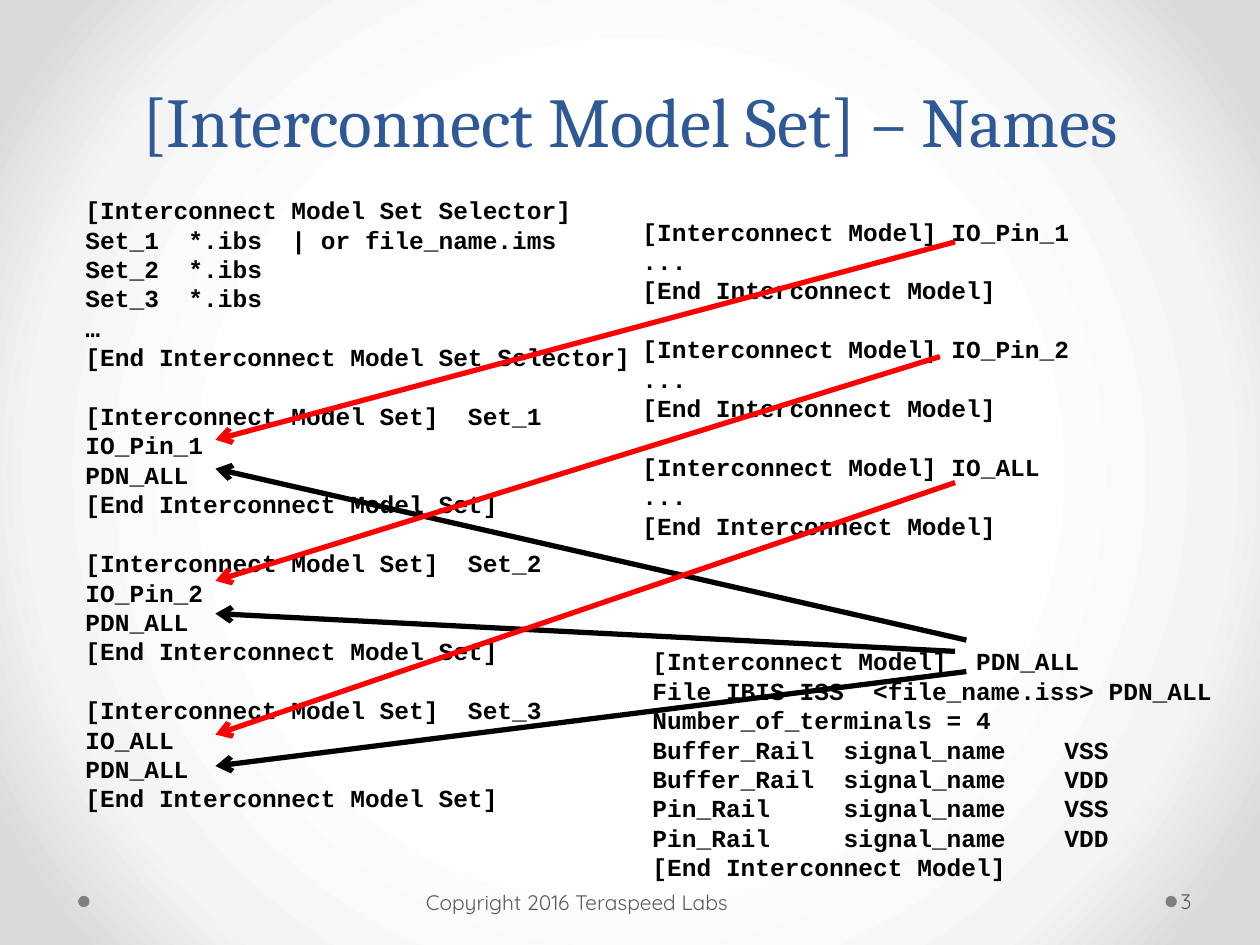
from pptx import Presentation
from pptx.dml.color import RGBColor
from pptx.enum.shapes import MSO_CONNECTOR, MSO_SHAPE
from pptx.enum.text import MSO_ANCHOR, PP_ALIGN
from pptx.oxml import parse_xml
from pptx.oxml.ns import nsdecls
from pptx.util import Inches, Pt

CODE_FONT = "Courier New"
FOOTER_FONT = "Quicksand"
BLACK, RED, BLUE = "000000", "FF0000", "2F5897"
GREY, DOT_GREY = "595959", "808080"
GLOW_STOPS = [(50, "FFFFFF"), (76, "F4F4F4"), (92, "DADADA")]

ARROW_TIP_X = 1.71
# Start x, start y, tip y, colour
ARROWS = [
    (7.58, 5.17, 4.87, BLACK),
    (7.67, 5.08, 3.72, BLACK),
    (7.67, 5.33, 6.08, BLACK),
    (7.58, 1.92, 3.49, RED),
    (7.46, 2.83, 4.61, RED),
    (7.58, 3.83, 5.83, RED),
]

SELECTOR = [
    "[Interconnect Model Set Selector]",
    "Set_1  *.ibs  | or file_name.ims",
    "Set_2  *.ibs",
    "Set_3  *.ibs",
    "…",
    "[End Interconnect Model Set Selector]",
]
IO_MODELS = ["IO_Pin_1", "IO_Pin_2", "IO_ALL"]
PDN_MODEL = [
    "[Interconnect Model]  PDN_ALL",
    "File_IBIS-ISS  <file_name.iss> PDN_ALL",
    "Number_of_terminals = 4",
    "Buffer_Rail  signal_name    VSS",
    "Buffer_Rail  signal_name    VDD",
    "Pin_Rail     signal_name    VSS",
    "Pin_Rail     signal_name    VDD",
    "[End Interconnect Model]",
]


def rgb(value):
    return RGBColor.from_string(value)


def set_glow_background(page):
    """Fill the page with a round gradient, white in the middle."""
    stops = "".join(
        f'<a:gs pos="{percent * 1000}"><a:srgbClr val="{color}"/></a:gs>'
        for percent, color in GLOW_STOPS
    )
    page.element.cSld.insert(0, parse_xml(
        f'<p:bg {nsdecls("p", "a")}><p:bgPr><a:gradFill rotWithShape="1">'
        f'<a:gsLst>{stops}</a:gsLst><a:path path="circle">'
        '<a:fillToRect l="50000" t="50000" r="50000" b="50000"/></a:path>'
        '</a:gradFill><a:effectLst/></p:bgPr></p:bg>'
    ))


def add_text_box(page, left, top, width, height, anchor, margin_left=0.1):
    box = page.shapes.add_textbox(
        Inches(left), Inches(top), Inches(width), Inches(height))
    frame = box.text_frame
    frame.word_wrap = True
    frame.vertical_anchor = anchor
    frame.margin_left = Inches(margin_left)
    return frame


def write(para, text, *, size, font, color, bold=False):
    span = para.add_run()
    span.text = text
    span.font.size = Pt(size)
    span.font.name = font
    span.font.bold = bold
    span.font.color.rgb = rgb(color)


def add_title(page, text):
    frame = add_text_box(page, 0.5, 0, 9, 1.75, MSO_ANCHOR.MIDDLE)
    para = frame.paragraphs[0]
    para.alignment = PP_ALIGN.CENTER
    para.line_spacing = Pt(58)
    write(para, text, size=40, font="Cambria", color=BLUE)


def add_footer(page, text, left, top, width, margin_left):
    frame = add_text_box(
        page, left, top, width, 0.4, MSO_ANCHOR.MIDDLE, margin_left)
    write(frame.paragraphs[0], text, size=12, font=FOOTER_FONT, color=GREY)


def add_listing(page, left, top, width, height, blocks):
    """Set blocks of code lines, one line's height apart."""
    frame = add_text_box(page, left, top, width, height, MSO_ANCHOR.TOP)
    for block_index, lines in enumerate(blocks):
        for line_index, line in enumerate(lines):
            is_first = block_index == line_index == 0
            para = frame.paragraphs[0] if is_first else frame.add_paragraph()
            if block_index and line_index == 0:
                para.space_before = Pt(16.8)
            write(para, line, size=14, font=CODE_FONT, color=BLACK, bold=True)


def add_dot(page, left):
    dot = page.shapes.add_shape(
        MSO_SHAPE.OVAL, Inches(left), Inches(7.11), Inches(0.09), Inches(0.09))
    dot.shadow.inherit = False
    dot.fill.solid()
    dot.fill.fore_color.rgb = rgb(DOT_GREY)
    dot.line.fill.background()


def add_arrow(page, start_x, start_y, tip_y, color):
    arrow = page.shapes.add_connector(
        MSO_CONNECTOR.STRAIGHT, Inches(start_x), Inches(start_y),
        Inches(ARROW_TIP_X), Inches(tip_y))
    arrow.line.width = Pt(3)
    arrow.line.color.rgb = rgb(color)
    arrow.line._get_or_add_ln().append(
        parse_xml(f'<a:tailEnd {nsdecls("a")} type="arrow"/>'))
    arrow._element.spPr.append(parse_xml(f'<a:effectLst {nsdecls("a")}/>'))


def main():
    deck = Presentation()
    deck.slide_width, deck.slide_height = Inches(10), Inches(7.5)
    page = deck.slides.add_slide(deck.slide_layouts[6])
    set_glow_background(page)

    for left in (9.25, 0.62):
        add_dot(page, left)
    add_title(page, "[Interconnect Model Set] – Names")
    add_footer(page, "3", 9.34, 6.95, 0.61, 0.03)
    add_footer(page, "Copyright 2016 Teraspeed Labs", 3.33, 6.96, 3.11, 0.05)

    model_sets = [
        [f"[Interconnect Model Set]  Set_{number}", model, "PDN_ALL",
         "[End Interconnect Model Set]"]
        for number, model in enumerate(IO_MODELS, start=1)
    ]
    io_models = [
        [f"[Interconnect Model] {model}", "...", "[End Interconnect Model]"]
        for model in IO_MODELS
    ]
    add_listing(page, 0.58, 1.5, 4.75, 5.76, [SELECTOR, *model_sets])
    add_listing(page, 5.08, 5.08, 4.75, 1.99, [PDN_MODEL])
    add_listing(page, 5, 1.67, 3.75, 2.69, io_models)

    for arrow in ARROWS:
        add_arrow(page, *arrow)
    deck.save("out.pptx")


if __name__ == "__main__":
    main()
